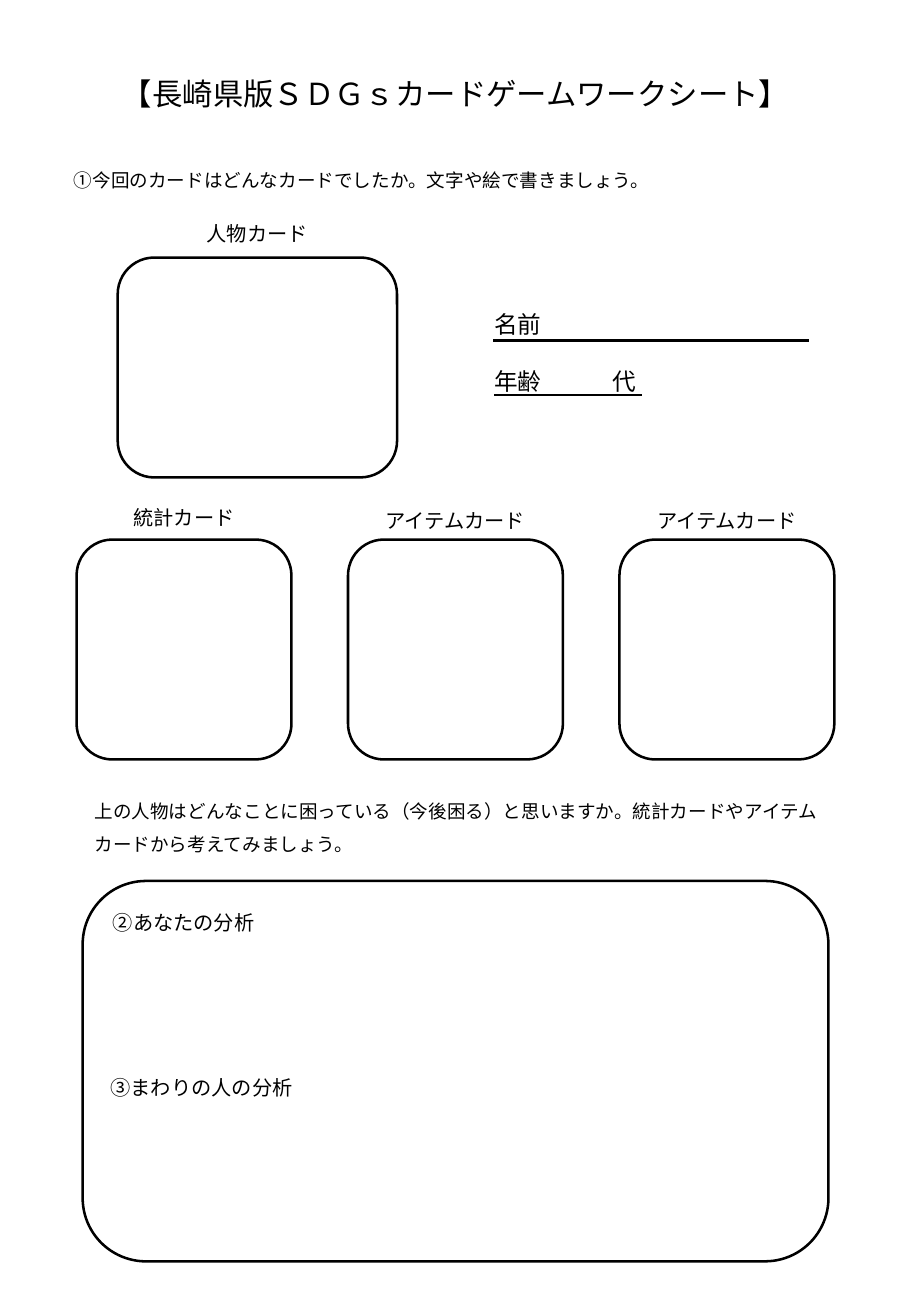
from pptx import Presentation
from pptx.dml.color import RGBColor
from pptx.enum.shapes import MSO_CONNECTOR, MSO_SHAPE
from pptx.enum.text import PP_ALIGN
from pptx.oxml.ns import qn
from pptx.util import Pt
from lxml.etree import SubElement

FONT = "Noto Sans CJK JP"
INK = "000000"


def color(value):
    return RGBColor.from_string(value)


def style(para, size):
    for run in para.runs:
        run.font.size = Pt(size)
        run.font.name = FONT
        run.font.color.rgb = color(INK)
        SubElement(run._r.get_or_add_rPr(), qn("a:ea"), typeface=FONT)


def write(slide, box, text, size, align=PP_ALIGN.LEFT):
    shape = slide.shapes.add_textbox(*map(Pt, box))
    frame = shape.text_frame
    frame.word_wrap = True
    frame.text = text
    for para in frame.paragraphs:
        para.alignment = align
        style(para, size)
    return frame


def frame_box(slide, box):
    shape = slide.shapes.add_shape(MSO_SHAPE.ROUNDED_RECTANGLE, *map(Pt, box))
    shape.shadow.inherit = False
    shape.fill.background()
    shape.line.color.rgb = color(INK)
    shape.line.width = Pt(1.5)


def rule(slide, left, top, width):
    line = slide.shapes.add_connector(
        MSO_CONNECTOR.STRAIGHT, Pt(left), Pt(top), Pt(left + width), Pt(top))
    line.line.color.rgb = color(INK)
    line.line.width = Pt(1.5)
    SubElement(line._element.spPr, qn("a:effectLst"))


def card(slide, box, label, width, gap):
    left, top, wide, _ = box
    frame_box(slide, box)
    write(slide, (left + (wide - width) / 2, top - gap, width, 21.8),
          label, 12, PP_ALIGN.CENTER)


def profile(slide, box):
    left, top, _, _ = box
    frame = write(slide, box, "名前\n年齢\t代", 14)
    age = frame.paragraphs[1]
    age.space_before = Pt(17)
    # Tab stop leaves room to write the age
    tabs = SubElement(age._p.get_or_add_pPr(), qn("a:tabLst"))
    SubElement(tabs, qn("a:tab"), pos=str(Pt(70)), algn="l")
    rule(slide, left + 6.5, top + 21.6, 187.2)
    rule(slide, left + 7.2, top + 54, 87.8)


def item_row(slide, box):
    left, top, width, height = box
    wide = 127.4
    step = (width - wide) / 2
    cards = [("統計カード", 76.3, 23.8),
             ("アイテムカード", 103, 22.3),
             ("アイテムカード", 103, 22.3)]
    for i, (label, span, gap) in enumerate(cards):
        card(slide, (left + i * step, top, wide, height), label, span, gap)


def analysis(slide, box):
    left, top, _, _ = box
    frame_box(slide, box)
    write(slide, (left + 10.8, top + 13.7, 108.7, 21.8), "②あなたの分析", 12)
    write(slide, (left + 9.4, top + 111.6, 123.8, 21.8), "③まわりの人の分析", 12)


def main():
    deck = Presentation()
    deck.slide_width, deck.slide_height = Pt(540), Pt(779.76)
    slide = deck.slides.add_slide(deck.slide_layouts[6])

    # Title and first task
    write(slide, (59.8, 41, 420.5, 29), "【長崎県版ＳＤＧｓカードゲームワークシート】",
          18, PP_ALIGN.CENTER)
    write(slide, (36.7, 96.5, 350, 20.9),
          "①今回のカードはどんなカードでしたか。文字や絵で書きましょう。", 11)

    # Person card with name and age
    card(slide, (69.8, 152.6, 165.6, 130.3), "人物カード", 84.2, 25.2)
    profile(slide, (285.8, 180, 192.2, 58.3))

    # Statistics and item cards
    item_row(slide, (45.4, 319.7, 449.2, 130.3))

    # Second task
    task = write(
        slide, (49, 463.7, 445.7, 43.9),
        "上の人物はどんなことに困っている（今後困る）と思いますか。"
        "統計カードやアイテムカードから考えてみましょう。", 11)
    task.paragraphs[0].line_spacing = 1.5
    analysis(slide, (49, 522, 442.1, 225.4))
    deck.save("out.pptx")


if __name__ == "__main__":
    main()
